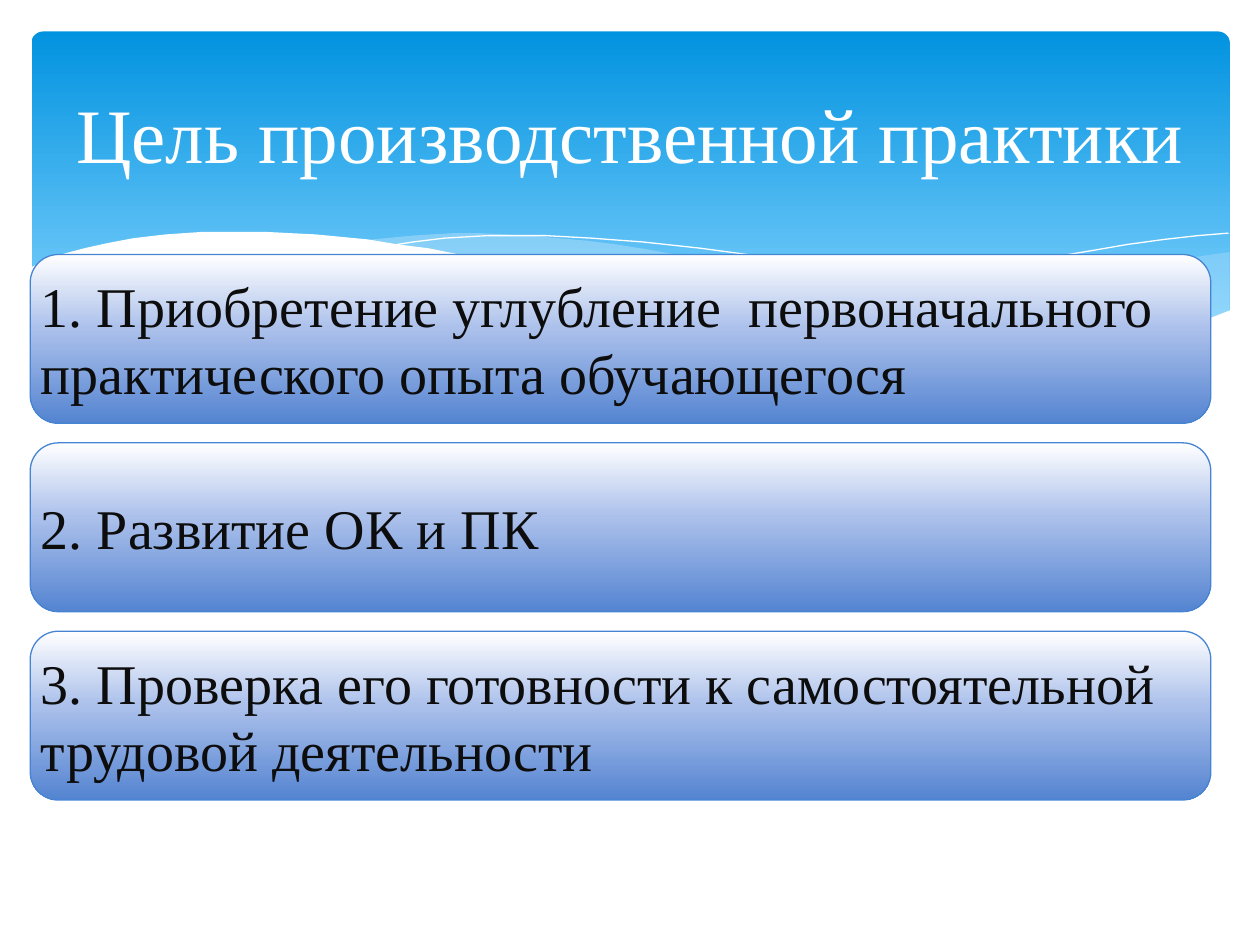
from lxml import etree
from pptx import Presentation
from pptx.dml.color import RGBColor
from pptx.enum.shapes import MSO_SHAPE
from pptx.enum.text import MSO_ANCHOR, PP_ALIGN
from pptx.oxml.ns import qn
from pptx.util import Inches, Pt

ROUNDED = MSO_SHAPE.ROUNDED_RECTANGLE
MIDDLE = MSO_ANCHOR.MIDDLE
LEFT, CENTER = PP_ALIGN.LEFT, PP_ALIGN.CENTER
FONT = "Times New Roman"
WHITE, INK, OUTLINE, PALE = "FFFFFF", "0D0D0D", "4584D3", "C6E7FC"

TITLE = "Цель производственной практики"
GOALS = [
    "1. Приобретение углубление  первоначального практического опыта обучающегося",
    "2. Развитие ОК и ПК",
    "3. Проверка его готовности к самостоятельной трудовой деятельности",
]
BANNER_STOPS = [(0, "0293E0"), (90, "83D3FE")]
GOAL_STOPS = [(0, WHITE), (44, "ABC0EB"), (100, "5484D1")]
GOAL_LEFT, GOAL_TOP, GOAL_WIDTH, GOAL_HEIGHT, GOAL_STEP = 0.24, 2.02, 9.37, 1.34, 1.495

RIGHT_WAVE = [
    (9.76, 2), (9.48, 2.04), (9.21, 2.1), (8.91, 2.16), (8.61, 2.23), (8.05, 2.37),
    (7.53, 2.48), (7.06, 2.57), (6.61, 2.65), (6.91, 2.69), (7.19, 2.72), (7.45, 2.75),
    (7.69, 2.77), (8.03, 2.78), (8.35, 2.77), (8.63, 2.75), (8.89, 2.72), (9.13, 2.67),
    (9.35, 2.62), (9.49, 2.57), (9.63, 2.52), (9.76, 2.47),
]
MIDDLE_WAVE = [
    (8.93, 2.73), (8.66, 2.69), (8.37, 2.65), (8.07, 2.6), (7.75, 2.54), (7.41, 2.47),
    (7.06, 2.4), (6.68, 2.31), (6.29, 2.22), (5.98, 2.14), (5.69, 2.08), (5.41, 2.03),
    (5.14, 1.98), (4.89, 1.94), (4.65, 1.91), (4.42, 1.89), (4.2, 1.87), (3.99, 1.86),
    (3.8, 1.85), (3.61, 1.85), (3.28, 1.87), (2.86, 1.91), (3.23, 1.96), (3.62, 2.03),
    (4.04, 2.11), (4.49, 2.22), (4.91, 2.32), (5.3, 2.4), (5.66, 2.48), (6.01, 2.55),
    (6.34, 2.61), (6.65, 2.66), (6.95, 2.7), (7.22, 2.74), (7.48, 2.76), (7.85, 2.78),
    (8.28, 2.78), (8.67, 2.76),
]
LONG_CURVE = [
    (3.09, 1.95), (3.28, 1.92), (3.53, 1.89), (3.87, 1.87), (4.33, 1.87), (4.69, 1.89),
    (5.1, 1.92), (5.56, 1.97), (6.08, 2.04), (6.65, 2.13), (6.95, 2.19), (7.27, 2.26),
    (7.6, 2.33), (7.95, 2.41), (8.31, 2.51), (8.69, 2.61), (9.07, 2.72),
]
RIGHT_CURVE = [
    (6.13, 2.57), (6.53, 2.46), (6.95, 2.35), (7.48, 2.23), (8.06, 2.1), (8.36, 2.04),
    (8.66, 1.99), (8.95, 1.94), (9.24, 1.9), (9.51, 1.87), (9.75, 1.85),
]
WHITE_WAVE = [
    (9.77, 2.46), (9.59, 2.53), (9.4, 2.59), (9.2, 2.65), (8.99, 2.69), (8.75, 2.73),
    (8.5, 2.75), (8.23, 2.77), (7.93, 2.76), (7.61, 2.75), (7.26, 2.72), (6.88, 2.68),
    (6.48, 2.62), (6.03, 2.54), (5.55, 2.45), (5.03, 2.33), (4.47, 2.2), (4.18, 2.13),
    (3.91, 2.07), (3.65, 2.02), (3.4, 1.97), (3.16, 1.94), (2.92, 1.9), (2.71, 1.88),
    (2.5, 1.86), (2.3, 1.85), (2.11, 1.84), (1.61, 1.84), (1.32, 1.86), (1.06, 1.89),
    (0.85, 1.93), (0.67, 1.97), (0.52, 2.01), (0.4, 2.05), (0.29, 2.1), (0.23, 2.13),
    (0.23, 3.29), (9.77, 3.29),
]
WAVES = [
    (RIGHT_WAVE, PALE, 29, None),
    (MIDDLE_WAVE, PALE, 40, None),
    (LONG_CURVE, None, 100, WHITE),
    (RIGHT_CURVE, None, 100, WHITE),
    (WHITE_WAVE, WHITE, 100, None),
]


def color(value):
    return RGBColor.from_string(value)


def set_line(shape, value, width=0):
    if value is None:
        shape.line.fill.background()
    else:
        shape.line.color.rgb = color(value)
        shape.line.width = Pt(width)


def add_wave(slide, points, fill, opacity, line):
    corners = [(Inches(x), Inches(y)) for x, y in points]
    builder = slide.shapes.build_freeform(*corners[0])
    builder.add_line_segments(corners[1:], close=fill is not None)
    shape = builder.convert_to_shape()
    shape.shadow.inherit = False
    set_line(shape, line)
    if fill is None:
        shape.fill.background()
        return
    shape.fill.solid()
    shape.fill.fore_color.rgb = color(fill)
    if opacity < 100:
        fill_color = shape._element.spPr.find(qn("a:solidFill"))[0]
        etree.SubElement(fill_color, qn("a:alpha"), val=str(opacity * 1000))


def add_gradient_box(slide, left, top, width, height, stops):
    shape = slide.shapes.add_shape(ROUNDED, *map(Inches, (left, top, width, height)))
    shape.shadow.inherit = False
    shape.fill.gradient()
    shape.fill.gradient_angle = 270
    stop_list = shape._element.spPr.find(qn("a:gradFill")).find(qn("a:gsLst"))
    for stop in list(stop_list):
        stop_list.remove(stop)
    for position, value in stops:
        stop = etree.SubElement(stop_list, qn("a:gs"), pos=str(position * 1000))
        etree.SubElement(stop, qn("a:srgbClr"), val=value)
    return shape


def write(shape, text, size, value, alignment):
    frame = shape.text_frame
    frame.word_wrap = True
    frame.vertical_anchor = MIDDLE
    paragraph = frame.paragraphs[0]
    paragraph.alignment = alignment
    run = paragraph.add_run()
    run.text = text
    run.font.name = FONT
    run.font.size = Pt(size)
    run.font.color.rgb = color(value)
    return frame


def main():
    presentation = Presentation()
    presentation.slide_width, presentation.slide_height = Inches(10), Inches(7.5)
    slide = presentation.slides.add_slide(presentation.slide_layouts[5])

    banner = add_gradient_box(slide, 0.25, 0.25, 9.51, 2.7, BANNER_STOPS)
    banner.adjustments[0] = 0.034
    set_line(banner, None)
    for wave in WAVES:
        add_wave(slide, *wave)

    title = slide.shapes.title
    title.left, title.top, title.width, title.height = map(Inches, (0.5, 0.37, 9, 1.37))
    write(title, TITLE, 44, WHITE, CENTER)
    slide.shapes._spTree.append(title._element)

    for row, goal in enumerate(GOALS):
        top = GOAL_TOP + row * GOAL_STEP
        box = add_gradient_box(slide, GOAL_LEFT, top, GOAL_WIDTH, GOAL_HEIGHT, GOAL_STOPS)
        set_line(box, OUTLINE, 0.75)
        frame = write(box, goal, 32, INK, LEFT)
        frame.margin_left = frame.margin_right = Inches(0.02)
        frame.margin_top = frame.margin_bottom = Inches(0.02)

    presentation.save("out.pptx")


if __name__ == "__main__":
    main()
